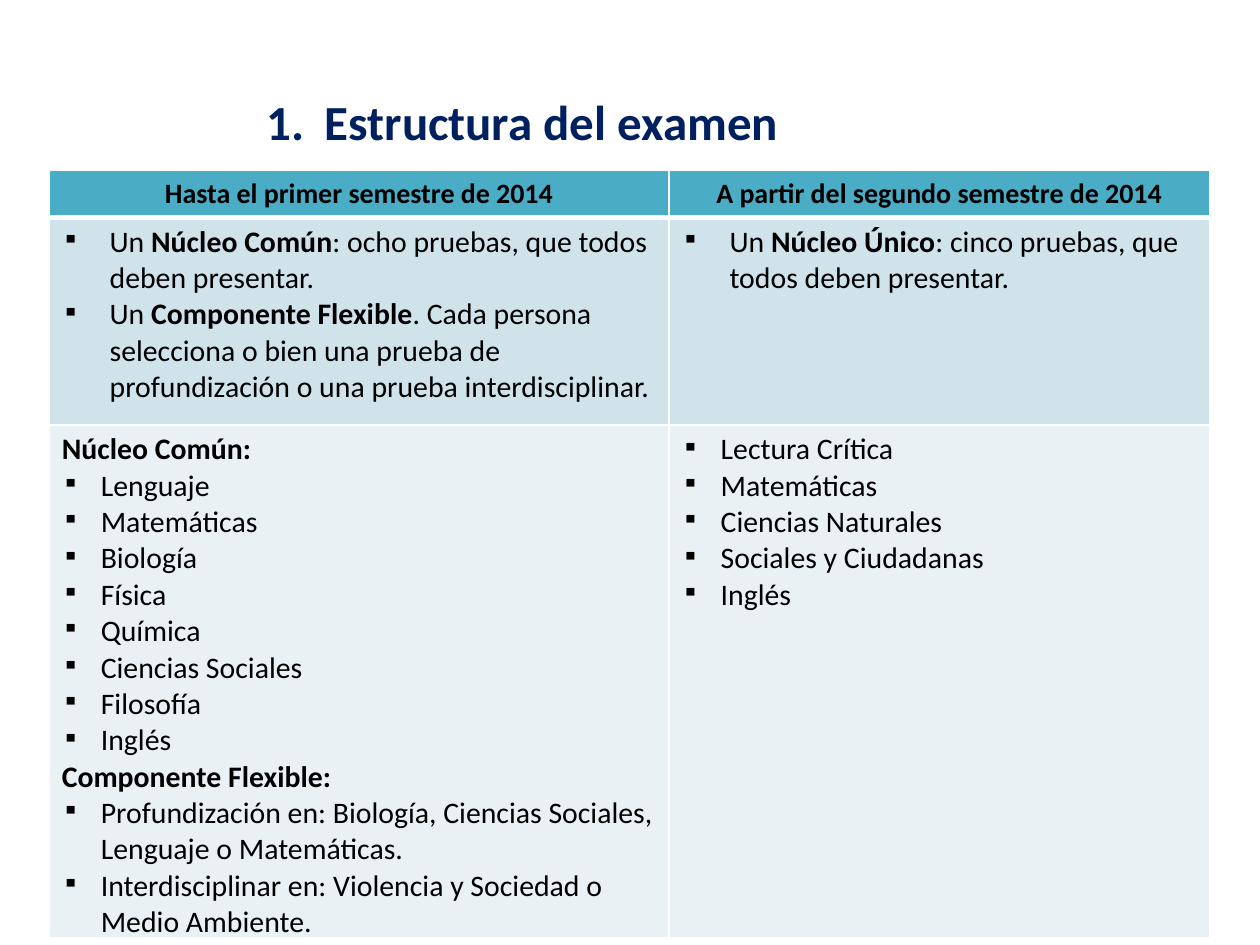
from dataclasses import dataclass
from typing import Any

from lxml import etree
from pptx import Presentation
from pptx import util as u
from pptx.dml.color import RGBColor
from pptx.enum import text
from pptx.oxml.ns import qn

NAVY = RGBColor(0x00, 0x20, 0x60)
BLACK = RGBColor(0x00, 0x00, 0x00)
WHITE = RGBColor(0xFF, 0xFF, 0xFF)
TEAL = RGBColor(0x4B, 0xAC, 0xC6)
PALE_BLUE = RGBColor(0xD0, 0xE3, 0xEA)
PALE_GREY = RGBColor(0xE9, 0xF1, 0xF5)

WIDTH, HEIGHT = u.Inches(10), u.Inches(7.5)

HEADERS = ["Hasta el primer semestre de 2014", "A partir del segundo semestre de 2014"]
STRUCTURE = [
    [
        "Un **Núcleo Común**: ocho pruebas, que todos deben presentar.",
        "Un **Componente Flexible**. Cada persona selecciona o bien una prueba de "
        "profundización o una prueba interdisciplinar.",
    ],
    ["Un **Núcleo Único**: cinco pruebas, que todos deben presentar."],
]
SUBJECTS = [
    [
        "Núcleo Común:",
        "Lenguaje",
        "Matemáticas",
        "Biología",
        "Física",
        "Química",
        "Ciencias Sociales",
        "Filosofía",
        "Inglés",
        "Componente Flexible:",
        "Profundización en: Biología, Ciencias Sociales, Lenguaje o Matemáticas.",
        "Interdisciplinar en: Violencia y Sociedad o Medio Ambiente.",
    ],
    [
        "Lectura Crítica",
        "Matemáticas",
        "Ciencias Naturales",
        "Sociales y Ciudadanas",
        "Inglés",
    ],
]


@dataclass
class SlideBuilder:
    page: Any
    font: str = "Calibri"
    header_size: float = 16
    body_size: float = 17

    def place(self, left, top, width, height):
        return (
            int(WIDTH * left), int(HEIGHT * top),
            int(WIDTH * width), int(HEIGHT * height),
        )

    def hang(self, para, margin, hanging):
        props = para._p.get_or_add_pPr()
        props.set("marL", str(u.Inches(margin)))
        props.set("indent", str(-u.Inches(hanging)))
        return props

    def bullet(self, para, indent):
        props = self.hang(para, indent, indent)
        etree.SubElement(props, qn("a:buSzPct"), val="80000")
        etree.SubElement(props, qn("a:buChar"), char="▪")

    def add_words(self, para, content, size, color, bold=False):
        para.font.name = self.font
        para.font.size = u.Pt(size)
        para.font.color.rgb = color
        for index, part in enumerate(content.split("**")):
            span = para.add_run()
            span.text = part
            span.font.bold = bold or index % 2 == 1

    def title(self, content, area, margin, hanging):
        box = self.page.shapes.add_textbox(*self.place(*area))
        box.text_frame.word_wrap = True
        para = box.text_frame.paragraphs[0]
        self.hang(para, margin, hanging)
        self.add_words(para, content, 28, NAVY, bold=True)

    def table(self, area, columns, rows):
        frame = self.page.shapes.add_table(len(rows), len(columns), *self.place(*area))
        grid = frame.table
        grid.first_row = grid.horz_banding = False
        for column, share in zip(grid.columns, columns):
            column.width = int(WIDTH * share)
        for row, share in zip(grid.rows, rows):
            row.height = int(HEIGHT * share)
        return grid

    def border(self, cell, top, bottom):
        props = cell._tc.get_or_add_tcPr()
        sides = [("a:lnL", 1), ("a:lnR", 1), ("a:lnT", top), ("a:lnB", bottom)]
        for index, (side, points) in enumerate(sides):
            line = etree.Element(qn(side), w=str(u.Pt(points)))
            fill = etree.SubElement(line, qn("a:solidFill"))
            etree.SubElement(fill, qn("a:srgbClr"), val=str(WHITE))
            props.insert(index, line)

    def paint(self, cell, color, top=1, bottom=1):
        cell.fill.solid()
        cell.fill.fore_color.rgb = color
        self.border(cell, top, bottom)

    def header(self, cell, content):
        self.paint(cell, TEAL, bottom=3)
        cell.vertical_anchor = text.MSO_ANCHOR.MIDDLE
        para = cell.text_frame.paragraphs[0]
        para.alignment = text.PP_ALIGN.CENTER
        self.add_words(para, content, self.header_size, BLACK, bold=True)

    def listing(self, cell, items, color, indent, top=1):
        self.paint(cell, color, top=top)
        frame = cell.text_frame
        for index, item in enumerate(items):
            para = frame.add_paragraph() if index else frame.paragraphs[0]
            heading = item.endswith(":")
            if not heading:
                self.bullet(para, indent)
            self.add_words(para, item, self.body_size, BLACK, bold=heading)


def main():
    deck = Presentation()
    deck.slide_width, deck.slide_height = WIDTH, HEIGHT
    builder = SlideBuilder(deck.slides.add_slide(deck.slide_layouts[6]))
    builder.title("1.\tEstructura del examen", (0.035, 0.09, 0.75, 0.076), 2.13, 0.46)
    grid = builder.table(
        (0.039, 0.18, 0.922, 0.8), (0.492, 0.429), (0.05, 0.22, 0.53)
    )
    for column, content in enumerate(HEADERS):
        builder.header(grid.cell(0, column), content)
        builder.listing(grid.cell(1, column), STRUCTURE[column], PALE_BLUE, 0.38, top=3)
        builder.listing(grid.cell(2, column), SUBJECTS[column], PALE_GREY, 0.31)
    deck.save("out.pptx")


if __name__ == "__main__":
    main()
